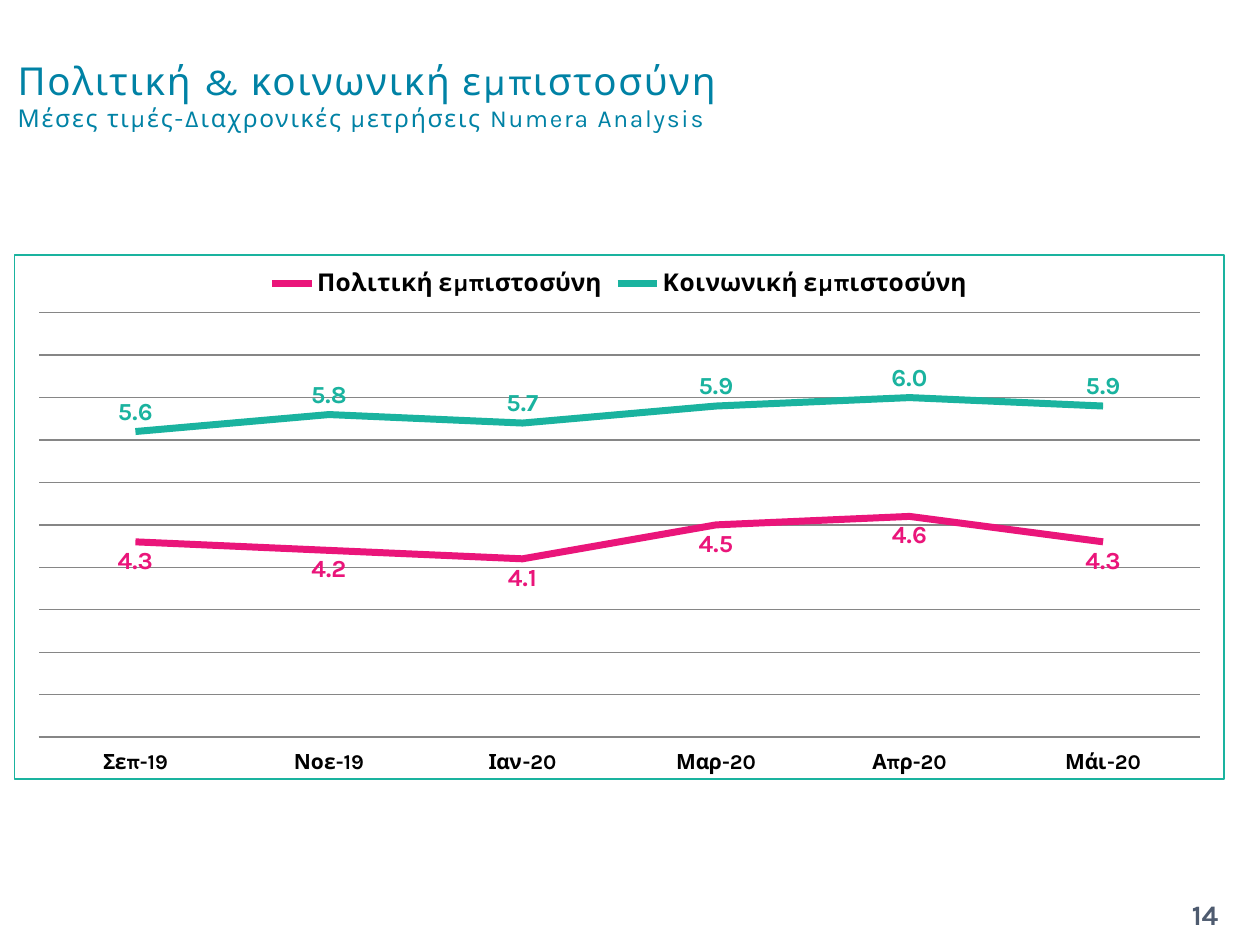
from dataclasses import dataclass

from lxml.etree import fromstring
from pptx import Presentation
from pptx.chart.chart import Chart
from pptx.chart.data import CategoryChartData
from pptx.dml.color import RGBColor
from pptx.enum.chart import (XL_LABEL_POSITION, XL_LEGEND_POSITION, XL_MARKER_STYLE,
                             XL_TICK_LABEL_POSITION, XL_TICK_MARK)
from pptx.enum.text import MSO_ANCHOR, PP_ALIGN
from pptx.oxml import parse_xml
from pptx.oxml.ns import nsdecls, qn
from pptx.slide import Slide
from pptx.util import Cm, Pt

FONT = "Karla"
TITLE_COLOR = "0082A5"
NUMBER_COLOR = "4E5B6F"
PINK = "EA157A"
TEAL = "1AB39F"
GRID = "868686"
BLACK = "000000"
MONTHS = ["Σεπ-19", "Νοε-19", "Ιαν-20", "Μαρ-20", "Απρ-20", "Μάι-20"]


@dataclass
class TrustSeries:
    name: str
    values: list[float]
    color: str
    label_position: XL_LABEL_POSITION


SERIES = [
    TrustSeries("Πολιτική εμπιστοσύνη", [4.3, 4.2, 4.1, 4.5, 4.6, 4.3], PINK,
                XL_LABEL_POSITION.BELOW),
    TrustSeries("Κοινωνική εμπιστοσύνη", [5.6, 5.8, 5.7, 5.9, 6.0, 5.9], TEAL,
                XL_LABEL_POSITION.ABOVE),
]


def rgb(color: str) -> RGBColor:
    return RGBColor.from_string(color)


def set_font(font, size: float, color: str, bold: bool = False) -> None:
    font.name = FONT
    font.size = Pt(size)
    font.bold = bold
    font.color.rgb = rgb(color)


def add_title(slide: Slide) -> None:
    title = slide.shapes.title
    title.left, title.top, title.width, title.height = Cm(0.1), Cm(0.71), Cm(19.02), Cm(2.41)
    frame = title.text_frame
    frame.text = ("Πολιτική & κοινωνική εμπιστοσύνη\v"
                  "Μέσες τιμές-Διαχρονικές μετρήσεις Numera Analysis")
    frame.word_wrap = True
    frame.vertical_anchor = MSO_ANCHOR.MIDDLE
    paragraph = frame.paragraphs[0]
    paragraph.alignment = PP_ALIGN.LEFT
    for run, size in zip(paragraph.runs, (22, 14)):
        set_font(run.font, size, TITLE_COLOR)
        run.font._element.set("spc", "100")


def add_page_number(slide: Slide) -> None:
    box = slide.shapes.add_textbox(Cm(23.29), Cm(17.93), Cm(2.01), Cm(1.02))
    frame = box.text_frame
    frame.text = "14"
    frame.word_wrap = True
    frame.vertical_anchor = MSO_ANCHOR.MIDDLE
    paragraph = frame.paragraphs[0]
    paragraph.alignment = PP_ALIGN.CENTER
    set_font(paragraph.runs[0].font, 16, NUMBER_COLOR, True)


def frame_chart(chart: Chart) -> None:
    """Draw the outer border and fix the inner plot area."""
    chart_element = chart.element.find(qn("c:chart"))
    chart_element.addnext(parse_xml(
        f'<c:spPr {nsdecls("c", "a")}><a:noFill/><a:ln w="9525"><a:solidFill>'
        f'<a:srgbClr val="{TEAL}"/></a:solidFill></a:ln></c:spPr>'))
    plot_area = chart_element.find(qn("c:plotArea"))
    for layout in plot_area.findall(qn("c:layout")):
        plot_area.remove(layout)
    sizes = {"x": 0.02, "y": 0.11, "w": 0.96, "h": 0.81}
    parts = "".join(f'<c:{key} val="{value}"/>' for key, value in sizes.items())
    plot_area.insert(0, parse_xml(
        f'<c:layout {nsdecls("c")}><c:manualLayout><c:layoutTarget val="inner"/>'
        f'<c:xMode val="edge"/><c:yMode val="edge"/>{parts}</c:manualLayout></c:layout>'))


def format_series(series, trust: TrustSeries) -> None:
    series.smooth = False
    series.marker.style = XL_MARKER_STYLE.NONE
    series.format.line.color.rgb = rgb(trust.color)
    series.format.line.width = Pt(4)
    labels = series.data_labels
    labels.show_value = True
    labels.number_format = "#,##0.0"
    labels.number_format_is_linked = False
    labels.position = trust.label_position
    set_font(labels.font, 14, trust.color, True)


def add_trust_chart(slide: Slide) -> None:
    data = CategoryChartData()
    data.categories = MONTHS
    for trust in SERIES:
        data.add_series(trust.name, trust.values)
    chart = slide.shapes.add_chart(XL_CHART_TYPE_LINE, Cm(0.28), Cm(5.13), Cm(24.41),
                                   Cm(10.59), data).chart
    chart.has_title = False
    set_font(chart.font, 18, BLACK)
    frame_chart(chart)

    chart.has_legend = True
    chart.legend.position = XL_LEGEND_POSITION.TOP
    chart.legend.include_in_layout = False
    set_font(chart.legend.font, 14, BLACK, True)

    months = chart.category_axis
    months.major_tick_mark = XL_TICK_MARK.NONE
    months.tick_label_position = XL_TICK_LABEL_POSITION.LOW
    months.format.line.color.rgb = rgb(GRID)
    set_font(months.tick_labels.font, 12, BLACK, True)

    scale = chart.value_axis
    scale.minimum_scale, scale.maximum_scale, scale.major_unit = 2, 7, 0.5
    scale.visible = False
    scale.has_major_gridlines = True
    scale.major_gridlines.format.line.color.rgb = rgb(GRID)
    scale.major_gridlines.format.line.width = Pt(0.75)

    chart.plots[0].vary_by_categories = False
    for series, trust in zip(chart.plots[0].series, SERIES):
        format_series(series, trust)


def main() -> None:
    presentation = Presentation()
    presentation.slide_width, presentation.slide_height = Cm(25.4), Cm(19.05)
    slide = presentation.slides.add_slide(presentation.slide_layouts[5])
    add_title(slide)
    add_page_number(slide)
    add_trust_chart(slide)
    presentation.save("out.pptx")


from pptx.enum.chart import XL_CHART_TYPE
XL_CHART_TYPE_LINE = XL_CHART_TYPE.LINE

if __name__ == "__main__":
    main()
